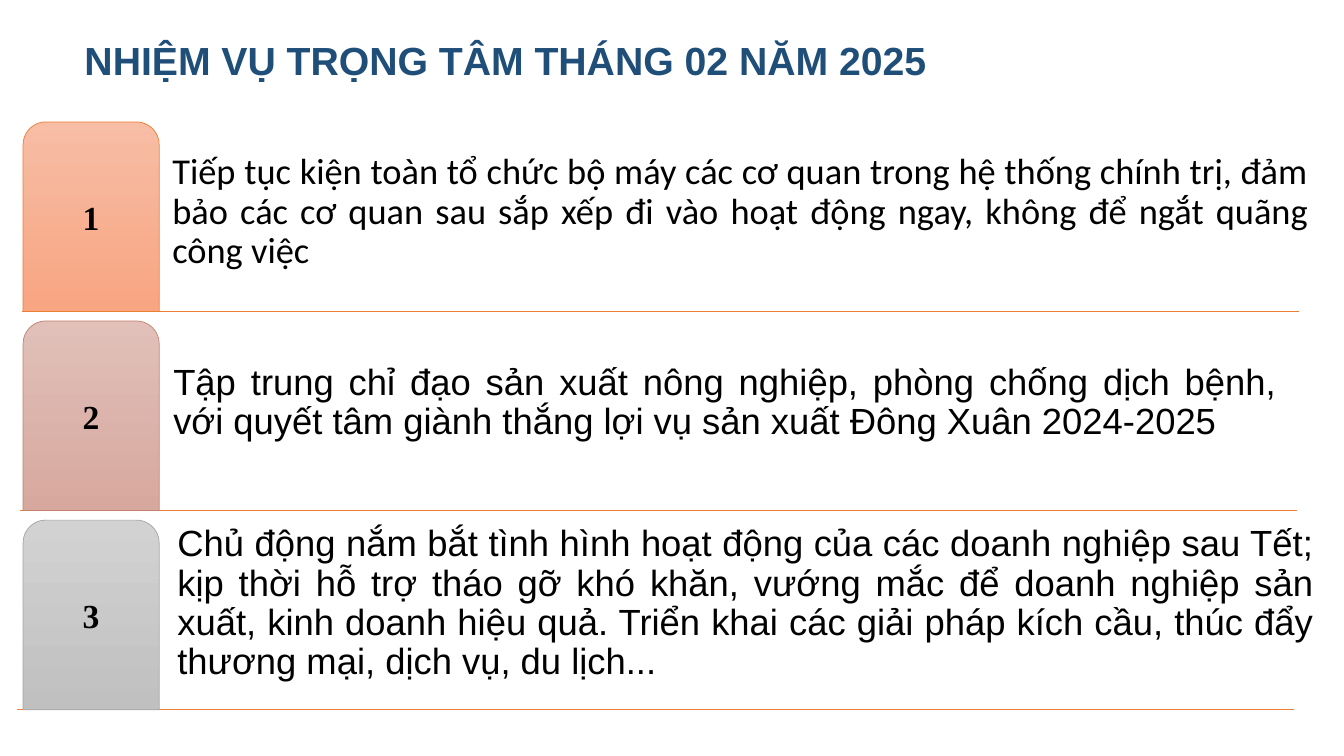
import pptx
import pptx.dml.color
import pptx.enum.shapes
import pptx.enum.text
import pptx.oxml
import pptx.util

Pt = pptx.util.Pt
ALIGN = pptx.enum.text.PP_ALIGN
ANCHOR = pptx.enum.text.MSO_ANCHOR

FIRST_TOP, ROW_PITCH, TAB_HEIGHT = 87.1, 142.2, 135.4
TAB_LEFT, TAB_WIDTH = 16.5, 97.2
RULE_WIDTH = 912.2

TASKS = [
    {
        "text": "Tiếp tục kiện toàn tổ chức bộ máy các cơ quan trong hệ thống chính trị, "
                "đảm bảo các cơ quan sau sắp xếp đi vào hoạt động ngay, không để ngắt quãng công việc",
        "font": "Calibri", "text_box": (119.5, 126.7, 819.4, 70.6),
        "gradient": ("F7BDA5", "F8A582"), "outline": "ED7D31", "rule_left": 15.9,
    },
    {
        "text": "Tập trung chỉ đạo sản xuất nông nghiệp, phòng chống dịch bệnh, "
                "với quyết tâm giành thắng lợi vụ sản xuất Đông Xuân 2024-2025",
        "font": "Arial", "text_box": (120.2, 208.1, 796.3, 111.6),
        "gradient": ("E0C0B9", "D7A89E"), "outline": "C48170", "rule_left": 14.4,
    },
    {
        "text": "Chủ động nắm bắt tình hình hoạt động của các doanh nghiệp sau Tết; "
                "kịp thời hỗ trợ tháo gỡ khó khăn, vướng mắc để doanh nghiệp sản xuất, "
                "kinh doanh hiệu quả. Triển khai các giải pháp kích cầu, thúc đẩy thương mại, "
                "dịch vụ, du lịch...",
        "font": "Arial", "text_box": (123.1, 355.7, 820.1, 135.4),
        "gradient": ("D2D2D2", "C0C0C0"), "outline": "A5A5A5", "rule_left": 12.4,
    },
]


def color(hex_string):
    """Return the colour named by a hex string."""
    return pptx.dml.color.RGBColor.from_string(hex_string)


def add_text(page, box, text, font, frame_format, para_format):
    """Add one wrapped paragraph of text in the given box."""
    frame = page.shapes.add_textbox(*map(Pt, box)).text_frame
    for name, value in {"word_wrap": True, **frame_format}.items():
        setattr(frame, name, value)
    para = frame.paragraphs[0]
    for name, value in para_format.items():
        setattr(para, name, value)
    span = para.add_run()
    span.text = text
    values = {"bold": False, **font}
    span.font.color.rgb = color(values.pop("color", "000000"))
    for name, value in values.items():
        setattr(span.font, name, value)


def add_rule(page, left, top):
    """Draw the thin line under a task."""
    rule = page.shapes.add_connector(
        pptx.enum.shapes.MSO_CONNECTOR.STRAIGHT,
        Pt(left), Pt(top), Pt(left + RULE_WIDTH), Pt(top))
    rule.line.color.rgb = color("ED7D31")
    rule.line.width = Pt(1)
    rule._element.spPr.append(pptx.oxml.parse_xml(
        '<a:effectLst xmlns:a="http://schemas.openxmlformats.org/drawingml/2006/main"/>'))


def add_tab(page, box, number, gradient, outline):
    """Draw a numbered tab with rounded top corners."""
    left, top, width, height = box
    tab = page.shapes.add_shape(
        pptx.enum.shapes.MSO_SHAPE.ROUND_2_SAME_RECTANGLE, *map(Pt, box))
    tab.shadow.inherit = False
    tab.adjustments[0] = 0.167
    tab.adjustments[1] = 0
    tab.fill.gradient()
    tab.fill.gradient_angle = 270
    for stop, hex_string, position in zip(tab.fill.gradient_stops, gradient, (0, 1)):
        stop.color.rgb = color(hex_string)
        stop.position = position
    tab.line.color.rgb = color(outline)
    tab.line.width = Pt(0.5)
    margins = dict.fromkeys(
        ("margin_left", "margin_top", "margin_right", "margin_bottom"), Pt(3.6))
    add_text(page, (left + 4.6, top + 4.6, width - 9.2, height - 4.6), str(number),
             {"name": "Times New Roman", "size": Pt(24), "bold": True},
             {"vertical_anchor": ANCHOR.MIDDLE, **margins},
             {"alignment": ALIGN.CENTER, "line_spacing": 0.9})


def add_task(page, box, number, task):
    """Add a task: its line, its text and its numbered tab."""
    left, top, width, height = box
    add_rule(page, task["rule_left"], top + height)
    margins = dict.fromkeys(
        ("margin_left", "margin_top", "margin_right", "margin_bottom"), Pt(3.6))
    add_text(page, task["text_box"], task["text"],
             {"name": task["font"], "size": Pt(26)},
             {"vertical_anchor": ANCHOR.BOTTOM, **margins},
             {"alignment": ALIGN.JUSTIFY, "line_spacing": 0.9})
    add_tab(page, box, number, task["gradient"], task["outline"])


def add_title(page, box):
    """Add the slide heading."""
    add_text(page, box, "NHIỆM VỤ TRỌNG TÂM THÁNG 02 NĂM 2025",
             {"name": "Arial", "size": Pt(28), "bold": True, "color": "1F4E79"},
             {"auto_size": pptx.enum.text.MSO_AUTO_SIZE.SHAPE_TO_FIT_TEXT}, {})


def main():
    """Build the slide and save the deck."""
    deck = pptx.Presentation()
    deck.slide_width, deck.slide_height = Pt(960), Pt(540)
    page = deck.slides.add_slide(deck.slide_layouts[6])
    for index, task in enumerate(TASKS):
        box = (TAB_LEFT, FIRST_TOP + index * ROW_PITCH, TAB_WIDTH, TAB_HEIGHT)
        add_task(page, box, index + 1, task)
    add_title(page, (53.3, 22.3, 626.4, 41))
    deck.save("out.pptx")


if __name__ == "__main__":
    main()
